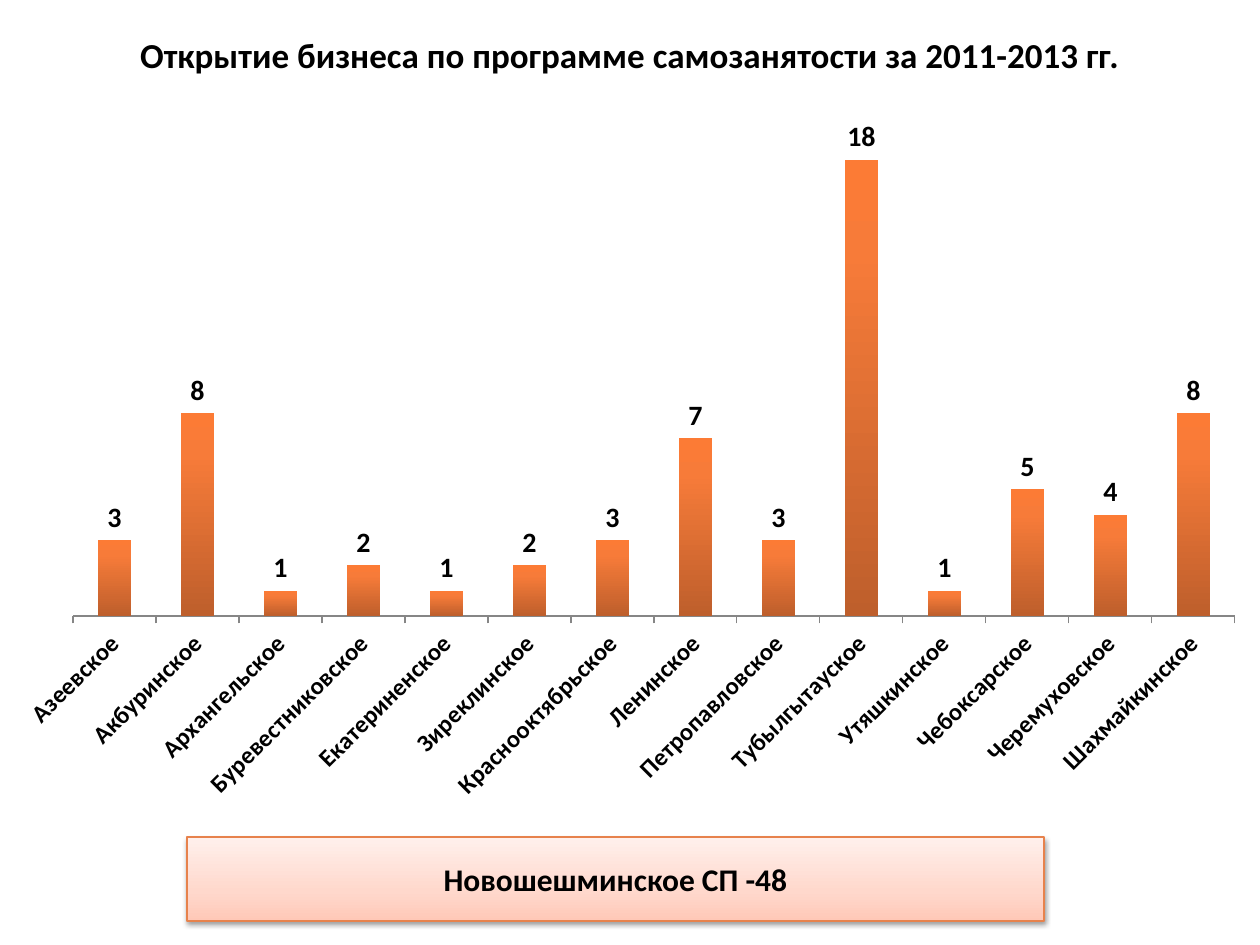
"""Build a slide with a column chart of businesses opened by settlement."""
from pptx import Presentation
from pptx.chart.data import CategoryChartData
from pptx.dml.color import RGBColor
from pptx.enum.chart import XL_CHART_TYPE as ChartType
from pptx.enum.chart import XL_LABEL_POSITION as LabelPos
from pptx.enum.chart import XL_TICK_LABEL_POSITION as TickLabelPos
from pptx.enum.chart import XL_TICK_MARK as TickMark
from pptx.enum.shapes import MSO_SHAPE as Shape
from pptx.enum.text import MSO_ANCHOR as Anchor
from pptx.enum.text import PP_ALIGN as Align
from pptx.oxml.ns import qn
from pptx.util import Pt
from lxml.etree import SubElement

TITLE = "Открытие бизнеса по программе самозанятости за 2011-2013 гг."
SUMMARY = "Новошешминское СП -48"
OPENED = {
    "Азеевское": 3, "Акбуринское": 8, "Архангельское": 1,
    "Буревестниковское": 2, "Екатериненское": 1, "Зиреклинское": 2,
    "Краснооктябрьское": 3, "Ленинское": 7, "Петропавловское": 3,
    "Тубылгытауское": 18, "Утяшкинское": 1, "Чебоксарское": 5,
    "Черемуховское": 4, "Шахмайкинское": 8,
}

FONT = "Calibri"
BLACK = RGBColor(0, 0, 0)
AXIS_GRAY = RGBColor(0x86, 0x86, 0x86)
BORDER = RGBColor(0xE7, 0x82, 0x4C)
COLUMN_STOPS = [(0, RGBColor(0xBE, 0x5F, 0x2C)), (80, RGBColor(0xF7, 0x7B, 0x39)),
                (100, RGBColor(0xFC, 0x7B, 0x35))]
SUMMARY_STOPS = [(0, RGBColor(0xFF, 0xC8, 0xB7)), (35, RGBColor(0xFF, 0xD8, 0xCC)),
                 (100, RGBColor(0xFF, 0xF0, 0xEC))]

SLIDE_SIZE = (1260, 945)
TITLE_BOX = (63, 0, 1134, 108)
CHART_BOX = (0, 0, 1260, 816)
PLOT_BOX = (73, 109, 1162, 507)
SUMMARY_BOX = (187, 837, 857, 84)


def px(*lengths):
    """Turn pixel lengths into EMU."""
    return [round(length * 914400 / 126) for length in lengths]


def set_font(font, size, bold=True):
    """Apply the slide's typeface and colour."""
    font.name, font.size, font.bold = FONT, Pt(size), bold
    font.color.rgb = BLACK


def write(shape, text, size, align=Align.CENTER, anchor=Anchor.MIDDLE):
    """Put one formatted line of text into a shape."""
    frame = shape.text_frame
    frame.word_wrap, frame.vertical_anchor = True, anchor
    paragraph = frame.paragraphs[0]
    paragraph.alignment = align
    run = paragraph.add_run()
    run.text = text
    set_font(run.font, size)


def fill_upward(fill, properties, stops):
    """Fill with a gradient that runs from bottom to top."""
    fill.gradient()
    fill.gradient_angle = 90
    stop_list = properties.find(qn("a:gradFill")).find(qn("a:gsLst"))
    for old in list(stop_list):
        stop_list.remove(old)
    for percent, color in stops:
        stop = SubElement(stop_list, qn("a:gs"), pos=str(percent * 1000))
        SubElement(stop, qn("a:srgbClr"), val=str(color))


def add_shadow(shape):
    """Give a shape a soft shadow below it."""
    shape.shadow.inherit = False
    effects = shape.element.spPr.find(qn("a:effectLst"))
    shadow = SubElement(effects, qn("a:outerShdw"), blurRad="40000", dist="20000",
                        dir="5400000", rotWithShape="0")
    color = SubElement(shadow, qn("a:srgbClr"), val=str(BLACK))
    SubElement(color, qn("a:alpha"), val="38000")


def place_plot(chart):
    """Fix the inner plot area inside the chart frame."""
    plot_area = chart.element.chart.plotArea
    for old in plot_area.findall(qn("c:layout")):
        plot_area.remove(old)
    layout = SubElement(plot_area, qn("c:layout"))
    plot_area.insert(0, layout)
    manual = SubElement(layout, qn("c:manualLayout"))
    SubElement(manual, qn("c:layoutTarget"), val="inner")
    for side in "xy":
        SubElement(manual, qn(f"c:{side}Mode"), val="edge")
    for side, length, whole in zip("xywh", PLOT_BOX, CHART_BOX[2:] * 2):
        SubElement(manual, qn(f"c:{side}"), val=f"{length / whole:.4f}")


def add_column_chart(slide):
    """Add the chart of businesses opened per settlement."""
    data = CategoryChartData()
    data.categories = list(OPENED)
    data.add_series(" ", list(OPENED.values()))
    chart = slide.shapes.add_chart(ChartType.COLUMN_CLUSTERED, *px(*CHART_BOX), data).chart
    chart.has_title = chart.has_legend = False
    set_font(chart.font, 18, bold=False)
    place_plot(chart)

    settlements = chart.category_axis
    settlements.major_tick_mark = TickMark.OUTSIDE
    settlements.tick_label_position = TickLabelPos.LOW
    settlements.format.line.color.rgb = AXIS_GRAY
    settlements.format.line.width = Pt(0.75)
    set_font(settlements.tick_labels.font, 14)
    label_body = settlements._element.find(qn("c:txPr")).find(qn("a:bodyPr"))
    label_body.set("rot", "-2700000")
    label_body.set("vert", "horz")

    counts = chart.value_axis
    counts.minimum_scale, counts.maximum_scale = 0, 20
    counts.has_major_gridlines = counts.visible = False

    plot = chart.plots[0]
    plot.gap_width, plot.vary_by_categories = 150, False
    plot.has_data_labels = True
    labels = plot.data_labels
    labels.show_value, labels.position = True, LabelPos.OUTSIDE_END
    set_font(labels.font, 16)
    columns = plot.series[0]
    columns_fill = columns.format.fill
    fill_upward(columns_fill, columns._element.find(qn("c:spPr")), COLUMN_STOPS)


def main():
    presentation = Presentation()
    presentation.slide_width, presentation.slide_height = px(*SLIDE_SIZE)
    slide = presentation.slides.add_slide(presentation.slide_layouts[6])

    write(slide.shapes.add_textbox(*px(*TITLE_BOX)), TITLE, 20)
    add_column_chart(slide)

    summary = slide.shapes.add_shape(Shape.FLOWCHART_PROCESS, *px(*SUMMARY_BOX))
    fill_upward(summary.fill, summary.element.spPr, SUMMARY_STOPS)
    summary.line.color.rgb, summary.line.width = BORDER, Pt(0.75)
    add_shadow(summary)
    write(summary, SUMMARY, 18)

    presentation.save("out.pptx")


if __name__ == "__main__":
    main()
